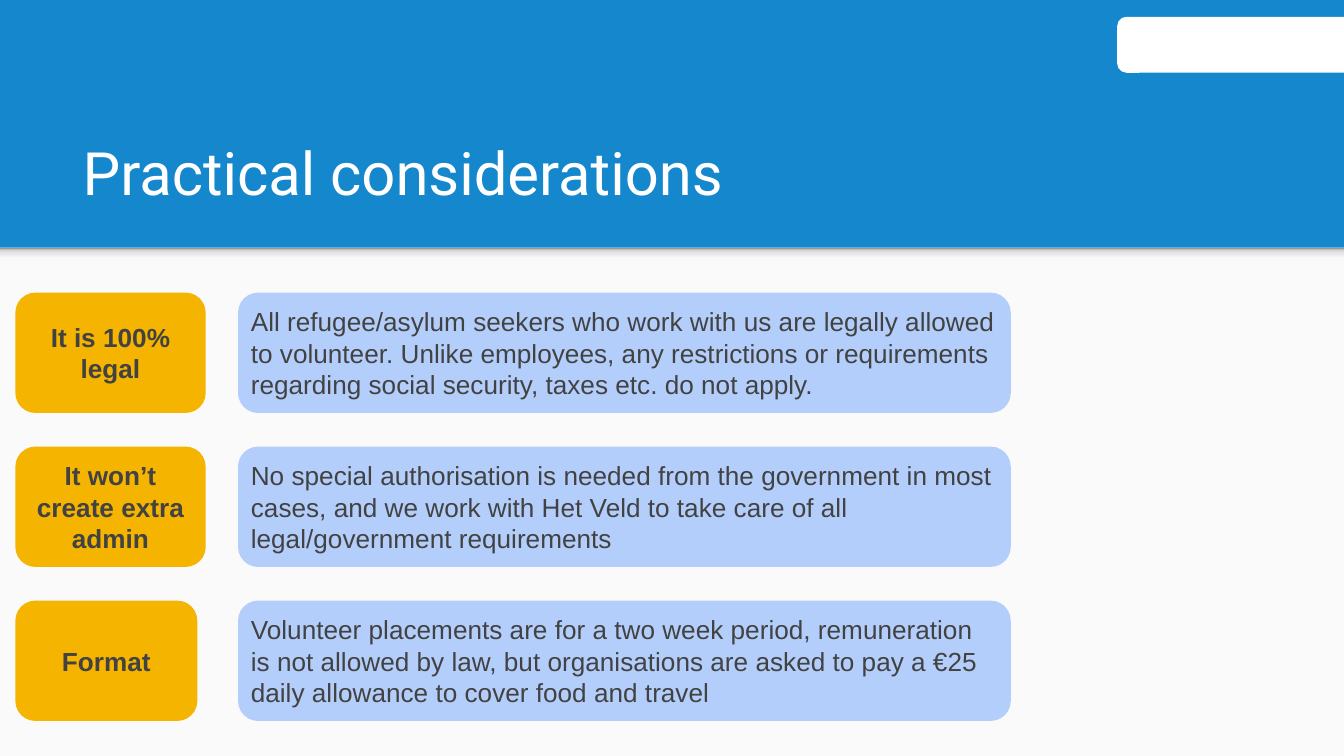
from dataclasses import dataclass

from lxml.etree import SubElement
from pptx import Presentation
from pptx.dml.color import RGBColor
from pptx.enum.shapes import MSO_SHAPE as Shape
from pptx.enum.text import MSO_ANCHOR as Anchor, MSO_AUTO_SIZE as AutoSize, PP_ALIGN as Align
from pptx.oxml.ns import qn
from pptx.util import Pt

PX = 9525
WIDTH, HEIGHT = 960, 540
HEADER_HEIGHT = 177
ROW_TOP, ROW_STEP, ROW_HEIGHT = 209, 110, 86
LABEL_LEFT, DETAIL_LEFT, DETAIL_WIDTH = 11, 170, 552

BLUE = RGBColor(0x15, 0x87, 0xCD)
PAPER = RGBColor(0xFA, 0xFA, 0xFA)
WHITE = RGBColor(0xFF, 0xFF, 0xFF)
AMBER = RGBColor(0xF4, 0xB4, 0x00)
PALE_BLUE = RGBColor(0xB3, 0xCE, 0xFB)
GREY = RGBColor(0x42, 0x42, 0x42)
SHADOW_STOPS = (
    (0, RGBColor(0xF9, 0xF9, 0xF9)),
    (36, RGBColor(0xF9, 0xF9, 0xF9)),
    (80, RGBColor(0xDE, 0xDE, 0xDE)),
    (100, RGBColor(0x99, 0x99, 0x99)),
)


@dataclass(frozen=True)
class Box:
    left: int
    top: int
    width: int
    height: int

    def emu(self) -> tuple[int, ...]:
        return tuple(side * PX for side in (self.left, self.top, self.width, self.height))


@dataclass(frozen=True)
class Consideration:
    label: str
    detail: str
    label_width: int = 136


CONSIDERATIONS = (
    Consideration(
        "It is 100% legal",
        "All refugee/asylum seekers who work with us are legally allowed to volunteer. "
        "Unlike employees, any restrictions or requirements regarding social security, "
        "taxes etc. do not apply.",
    ),
    Consideration(
        "It won’t create extra admin",
        "No special authorisation is needed from the government in most cases, and we "
        "work with Het Veld to take care of all legal/government requirements",
    ),
    Consideration(
        "Format",
        "Volunteer placements are for a two week period, remuneration is not allowed by "
        "law, but organisations are asked to pay a €25 daily allowance to cover food and travel",
        label_width=130,
    ),
)


def add_panel(page, box: Box, color: RGBColor, kind=Shape.RECTANGLE):
    panel = page.shapes.add_shape(kind, *box.emu())
    panel.shadow.inherit = False
    panel.fill.solid()
    panel.fill.fore_color.rgb = color
    panel.line.fill.background()
    return panel


def write_text(shape, text: str, *, size: int, color: RGBColor, font="Arial",
               bold=False, align=Align.LEFT, anchor=Anchor.MIDDLE, inset=5) -> None:
    frame = shape.text_frame
    frame.word_wrap = True
    frame.auto_size = AutoSize.NONE
    frame.vertical_anchor = anchor
    frame.margin_left = frame.margin_right = inset * PX
    frame.margin_top = frame.margin_bottom = inset * PX
    para = frame.paragraphs[0]
    para.alignment = align
    para.line_spacing = 1.0
    span = para.add_run()
    span.text = text
    span.font.name = font
    span.font.size = Pt(size)
    span.font.bold = bold
    span.font.color.rgb = color


def add_header_shadow(page) -> None:
    band = add_panel(page, Box(0, HEADER_HEIGHT, WIDTH, 12), PAPER)
    band.fill.gradient()
    band.fill.gradient_angle = 90
    stops = next(band._element.iter(qn("a:gsLst")))
    for stop in list(stops):
        stops.remove(stop)
    for percent, color in SHADOW_STOPS:
        stop = SubElement(stops, qn("a:gs"), pos=str(percent * 1000))
        SubElement(stop, qn("a:srgbClr"), val=str(color))


def add_title(page, text: str) -> None:
    title = page.shapes.title
    title.left, title.top, title.width, title.height = Box(49, 77, 863, 81).emu()
    write_text(title, text, size=32, color=WHITE, font="Roboto", anchor=Anchor.BOTTOM, inset=10)


def add_consideration(page, item: Consideration, top: int) -> None:
    detail = add_panel(page, Box(DETAIL_LEFT, top, DETAIL_WIDTH, ROW_HEIGHT),
                       PALE_BLUE, Shape.ROUNDED_RECTANGLE)
    write_text(detail, item.detail, size=14, color=GREY)
    label = add_panel(page, Box(LABEL_LEFT, top, item.label_width, ROW_HEIGHT),
                      AMBER, Shape.ROUNDED_RECTANGLE)
    write_text(label, item.label, size=14, color=GREY, bold=True, align=Align.CENTER, inset=4)


def main() -> None:
    deck = Presentation()
    deck.slide_width, deck.slide_height = WIDTH * PX, HEIGHT * PX
    page = deck.slides.add_slide(deck.slide_layouts[5])
    page.background.fill.solid()
    page.background.fill.fore_color.rgb = BLUE

    add_panel(page, Box(0, HEADER_HEIGHT, WIDTH, HEIGHT - HEADER_HEIGHT), PAPER)
    add_header_shadow(page)
    add_panel(page, Box(798, 12, 171, 40), WHITE, Shape.ROUNDED_RECTANGLE)
    add_title(page, "Practical considerations")
    for row, item in enumerate(CONSIDERATIONS):
        add_consideration(page, item, ROW_TOP + row * ROW_STEP)

    deck.save("out.pptx")


if __name__ == "__main__":
    main()
